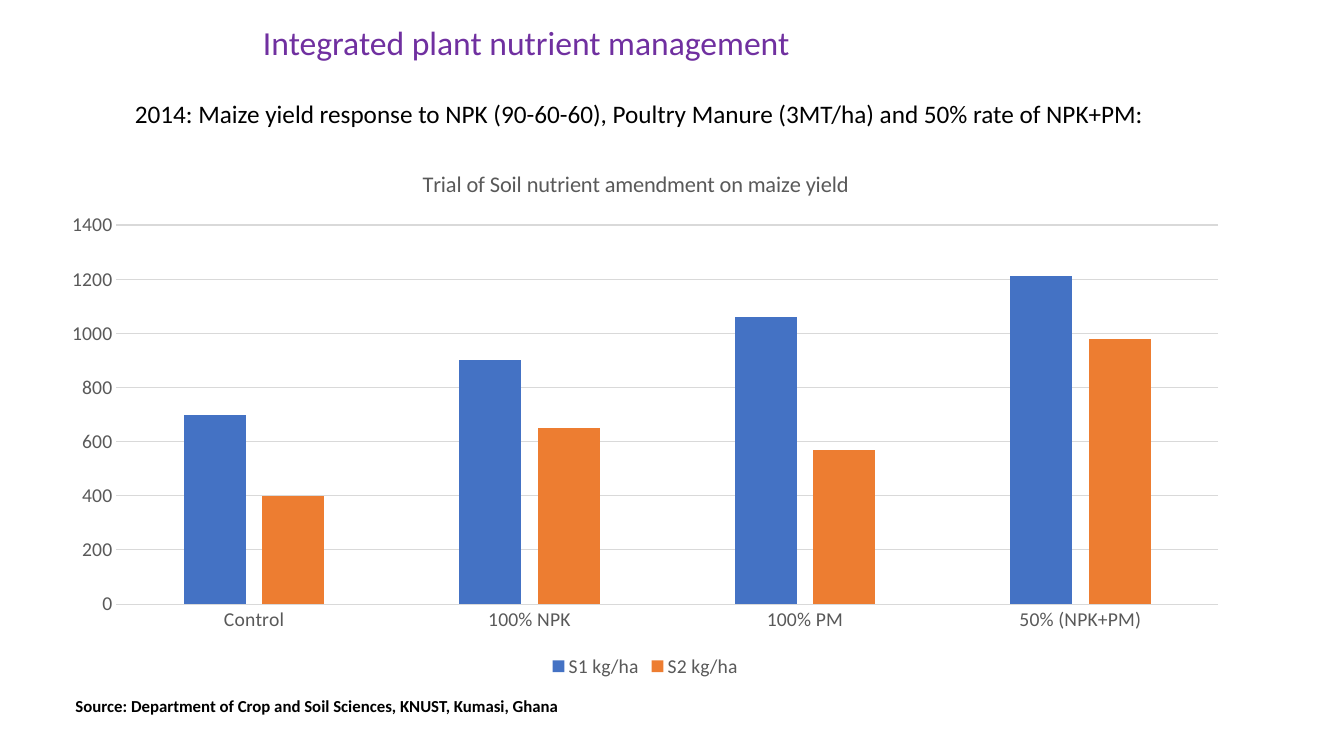
from lxml import etree
from pptx import Presentation
from pptx.chart.data import CategoryChartData
from pptx.dml.color import RGBColor
from pptx.enum.chart import XL_CHART_TYPE, XL_LEGEND_POSITION, XL_TICK_MARK
from pptx.enum.text import MSO_ANCHOR, PP_ALIGN
from pptx.oxml.ns import qn
from pptx.util import Inches, Pt

CLUSTERED = XL_CHART_TYPE.COLUMN_CLUSTERED
BOTTOM = XL_LEGEND_POSITION.BOTTOM
NO_TICK = XL_TICK_MARK.NONE
MIDDLE, LEFT, CENTER = MSO_ANCHOR.MIDDLE, PP_ALIGN.LEFT, PP_ALIGN.CENTER

FONT = "Calibri"
COLORS = {"heading": "7030A0", "text": "000000", "axis": "595959",
          "grid": "D9D9D9", "S1 kg/ha": "4472C4", "S2 kg/ha": "ED7D31"}
TREATMENTS = ["Control", "100% NPK", "100% PM", "50% (NPK+PM)"]
YIELDS = {"S1 kg/ha": [700, 900, 1060, 1210], "S2 kg/ha": [400, 650, 570, 980]}


def color(name):
    """Return the named colour."""
    return RGBColor.from_string(COLORS[name])


def style_font(font, size, name, bold=False):
    """Set typeface, size, weight and colour of a font."""
    font.name, font.size, font.bold = FONT, Pt(size), bold
    font.color.rgb = color(name)


def style_line(line, name):
    """Give a line the thin chart stroke."""
    line.width = Pt(0.75)
    line.color.rgb = color(name)


def write_line(shape, text, size, name, align=LEFT, bold=False):
    """Write one formatted paragraph into a shape."""
    frame = shape.text_frame
    frame.word_wrap = True
    frame.vertical_anchor = MIDDLE
    frame.text = text
    para = frame.paragraphs[0]
    para.alignment = align
    style_font(para.font, size, name, bold)


def add_heading(page, box, text):
    """Place the slide title in its box."""
    title = page.shapes.title
    title.left, title.top, title.width, title.height = map(Inches, box)
    write_line(title, text, 24, "heading", CENTER)


def add_caption(page, box, text, size, bold=False):
    """Add a line of black text in its box."""
    shape = page.shapes.add_textbox(*map(Inches, box))
    write_line(shape, text, size, "text", bold=bold)


def set_layout(parent, index, **fractions):
    """Fix the place of a chart part as fractions of the chart."""
    for old in parent.findall(qn("c:layout")):
        parent.remove(old)
    layout = etree.Element(qn("c:layout"))
    manual = etree.SubElement(layout, qn("c:manualLayout"))
    settings = {"xMode": "edge", "yMode": "edge", **fractions}
    if "w" in fractions:
        settings = {"layoutTarget": "inner", **settings}
    for tag, value in settings.items():
        etree.SubElement(manual, qn(f"c:{tag}")).set("val", str(value))
    parent.insert(index, layout)


def add_yield_chart(page, box, heading):
    """Add the clustered column chart of maize yields."""
    data = CategoryChartData()
    data.categories = TREATMENTS
    for name, values in YIELDS.items():
        data.add_series(name, values)
    chart = page.shapes.add_chart(CLUSTERED, *map(Inches, box), data).chart
    style_font(chart.font, 14, "axis")

    chart.has_title = True
    chart.chart_title.text_frame.text = heading
    style_font(chart.chart_title.text_frame.paragraphs[0].font, 16, "axis")
    set_layout(chart.chart_title.element, 1, x=0.31, y=0.04)
    plot_area = next(chart.element.iter(qn("c:plotArea")))
    set_layout(plot_area, 0, x=0.057, y=0.152, w=0.923, h=0.703)

    chart.has_legend = True
    chart.legend.position = BOTTOM
    chart.legend.include_in_layout = False
    style_font(chart.legend.font, 14, "axis")

    for axis in (chart.category_axis, chart.value_axis):
        axis.major_tick_mark = axis.minor_tick_mark = NO_TICK
        style_font(axis.tick_labels.font, 14, "axis")
    style_line(chart.category_axis.format.line, "grid")
    values = chart.value_axis
    values.minimum_scale, values.maximum_scale, values.major_unit = 0, 1400, 200
    values.format.line.fill.background()
    values.has_major_gridlines = True
    style_line(values.major_gridlines.format.line, "grid")

    plot = chart.plots[0]
    plot.gap_width, plot.overlap, plot.vary_by_categories = 219, -27, False
    for series in plot.series:
        series.format.fill.solid()
        series.format.fill.fore_color.rgb = color(series.name)


def main():
    """Build the slide and save the deck."""
    deck = Presentation()
    deck.slide_width, deck.slide_height = Inches(13.33), Inches(7.5)
    page = deck.slides.add_slide(deck.slide_layouts.get_by_name("Title Only"))
    add_heading(page, (2.22, 0.17, 6, 0.5), "Integrated plant nutrient management")
    add_caption(page, (1.24, 0.93, 10.96, 0.4),
                "2014: Maize yield response to NPK (90-60-60), "
                "Poultry Manure (3MT/ha) and 50% rate of NPK+PM:", 18)
    add_yield_chart(page, (0.48, 1.42, 11.84, 5.35),
                    "Trial of Soil nutrient amendment on maize yield")
    add_caption(page, (0.65, 6.85, 5.05, 0.3),
                "Source: Department of Crop and Soil Sciences, KNUST, Kumasi, Ghana",
                12, bold=True)
    deck.save("out.pptx")


if __name__ == "__main__":
    main()
